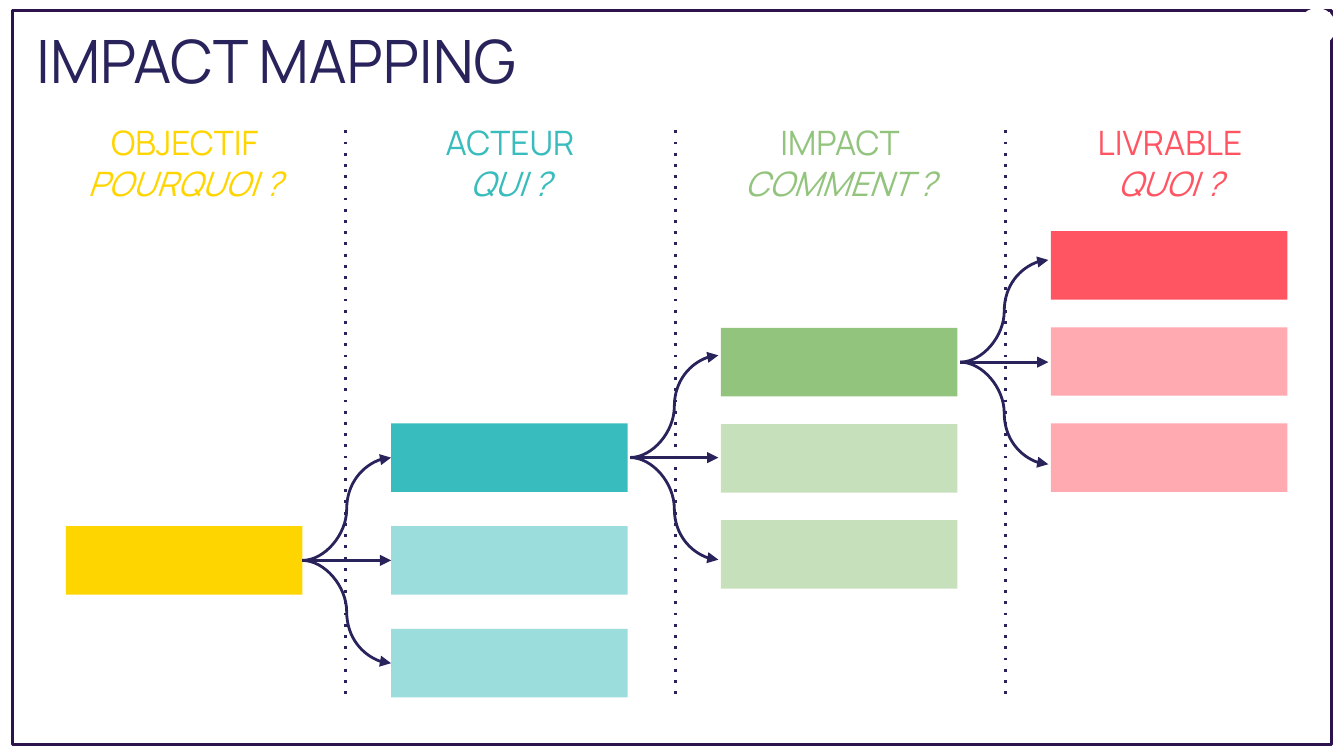
import pptx
import pptx.dml.color
import pptx.enum.shapes
import pptx.enum.text
import pptx.oxml
import pptx.oxml.ns
import pptx.util

COLOURS = {"ink": "29235C", "frame": "2D134B", "paper": "FFFFFF", "goal": "FFD500",
           "actor": "39BCBD", "impact": "93C47D", "output": "FF5563"}
FONT = "Manrope"
BOX_W, BOX_H = 1.76, 0.51
PITCH, FAN = 4.91 / 2, 0.76
WIDE_STEP, STEP = 1.53 / 2, 1.43 / 2
COLUMNS = [
    {"colour": "goal", "left": 0.49, "top": 3.15 + WIDE_STEP, "step": 0, "rows": 1,
     "title": "OBJECTIF", "question": "POURQUOI ?", "gap": 0, "alpha": 50},
    {"colour": "actor", "left": 2.91, "top": 3.15, "step": WIDE_STEP, "rows": 3,
     "title": "ACTEUR", "question": "QUI ?", "gap": 0.02, "alpha": 50},
    {"colour": "impact", "left": 2.91 + PITCH, "top": 2.44, "step": STEP, "rows": 3,
     "title": "IMPACT", "question": "COMMENT ?", "gap": 0.02, "alpha": 51},
    {"colour": "output", "left": 2.91 + 2 * PITCH, "top": 1.72, "step": STEP, "rows": 3,
     "title": "LIVRABLE", "question": "QUOI ?", "gap": 0, "alpha": 50},
]


def inches(*values):
    """Convert numbers to lengths in inches."""
    return [pptx.util.Inches(v) for v in values]


def rgb(name):
    """Look up a named colour."""
    return pptx.dml.color.RGBColor.from_string(COLOURS[name])


def add_child(parent, tag, **attrs):
    """Append a drawing element to a parent element."""
    child = pptx.oxml.parse_xml(f"<a:{tag} {pptx.oxml.ns.nsdecls('a')}/>")
    for key, value in attrs.items():
        child.set(key, value)
    parent.append(child)


def add_shape(s, kind, box, fill=None, line=None, alpha=None):
    """Add a flat preset shape with an optional fill, outline and opacity."""
    shape = s.shapes.add_shape(kind, *inches(*box))
    shape.shadow.inherit = False
    if fill:
        shape.fill.solid()
        shape.fill.fore_color.rgb = rgb(fill)
    else:
        shape.fill.background()
    if line:
        shape.line.color.rgb = rgb(line)
        shape.line.width = pptx.util.Pt(1.5)
    else:
        shape.line.fill.background()
    if alpha:
        colour = shape._element.spPr.find(".//" + pptx.oxml.ns.qn("a:srgbClr"))
        add_child(colour, "alpha", val=str(alpha * 1000))
    return shape


def add_text(s, box, lines, size, colour, align):
    """Add a text box from (text, italic) lines."""
    tf = s.shapes.add_textbox(*inches(*box)).text_frame
    tf.word_wrap = True
    tf.margin_left = tf.margin_right = tf.margin_top = tf.margin_bottom = pptx.util.Inches(0.1)
    for i, (text, italic) in enumerate(lines):
        p = tf.add_paragraph() if i else tf.paragraphs[0]
        p.alignment = align
        r = p.add_run()
        r.text = text
        r.font.name = FONT
        r.font.size = pptx.util.Pt(size)
        r.font.italic = italic
        r.font.color.rgb = rgb(colour)


def add_line(s, kind, start, end):
    """Add an ink line without shadow."""
    line = s.shapes.add_connector(kind, *inches(*start, *end))
    line.line.color.rgb = rgb("ink")
    line.line.width = pptx.util.Pt(1.5)
    add_child(line._element.spPr, "effectLst")
    return line


def add_divider(s, x):
    """Add a dotted vertical line between two columns."""
    line = add_line(s, pptx.enum.shapes.MSO_CONNECTOR.STRAIGHT, (x, 0.97), (x, 5.19))
    add_child(line.line._get_or_add_ln(), "prstDash", val="dot")


def add_boxes(s, column):
    """Add a column of boxes, the first one opaque."""
    return [add_shape(s, pptx.enum.shapes.MSO_SHAPE.RECTANGLE,
                      (column["left"], column["top"] + i * column["step"], BOX_W, BOX_H),
                      column["colour"], alpha=column["alpha"] if i else None)
            for i in range(column["rows"])]


def add_fan(s, column, following, source, targets):
    """Add three curved arrows from a box to the next column."""
    x1 = column["left"] + BOX_W + column["gap"]
    x2 = following["left"] - column["gap"]
    y = column["top"] + BOX_H / 2
    for i, target in enumerate(targets):
        arrow = add_line(s, pptx.enum.shapes.MSO_CONNECTOR.CURVE, (x1, y), (x2, y + (i - 1) * FAN))
        add_child(arrow.line._get_or_add_ln(), "tailEnd", type="triangle")
        if not column["gap"]:
            arrow.begin_connect(source, 3)
            arrow.end_connect(target, 1)


def main():
    """Build the impact mapping slide."""
    prs = pptx.Presentation()
    prs.slide_width = pptx.util.Inches(10)
    prs.slide_height = prs.slide_width * 9 // 16
    s = prs.slides.add_slide(prs.slide_layouts[6])
    align = pptx.enum.text.PP_ALIGN
    shapes = pptx.enum.shapes.MSO_SHAPE
    add_shape(s, shapes.RECTANGLE, (0.09, 0.08, 9.82, 5.46), line="frame")
    add_text(s, (0.17, 0.08, 6.15, 0.84), [("IMPACT MAPPING", False)], 32, "ink", align.LEFT)
    for i in range(3):
        add_divider(s, 2.57 + i * PITCH)
    boxes = [add_boxes(s, column) for column in COLUMNS]
    for i in range(3):
        add_fan(s, COLUMNS[i], COLUMNS[i + 1], boxes[i][0], boxes[i + 1])
    for column in COLUMNS:
        add_text(s, (column["left"] - 0.11, 0.81, 1.99, 0.52),
                 [(column["title"], False), (column["question"], True)],
                 18, column["colour"], align.CENTER)
    add_shape(s, shapes.OVAL, (9.66, 0.06, 0.28, 0.28), "paper")
    prs.save("out.pptx")


if __name__ == "__main__":
    main()
